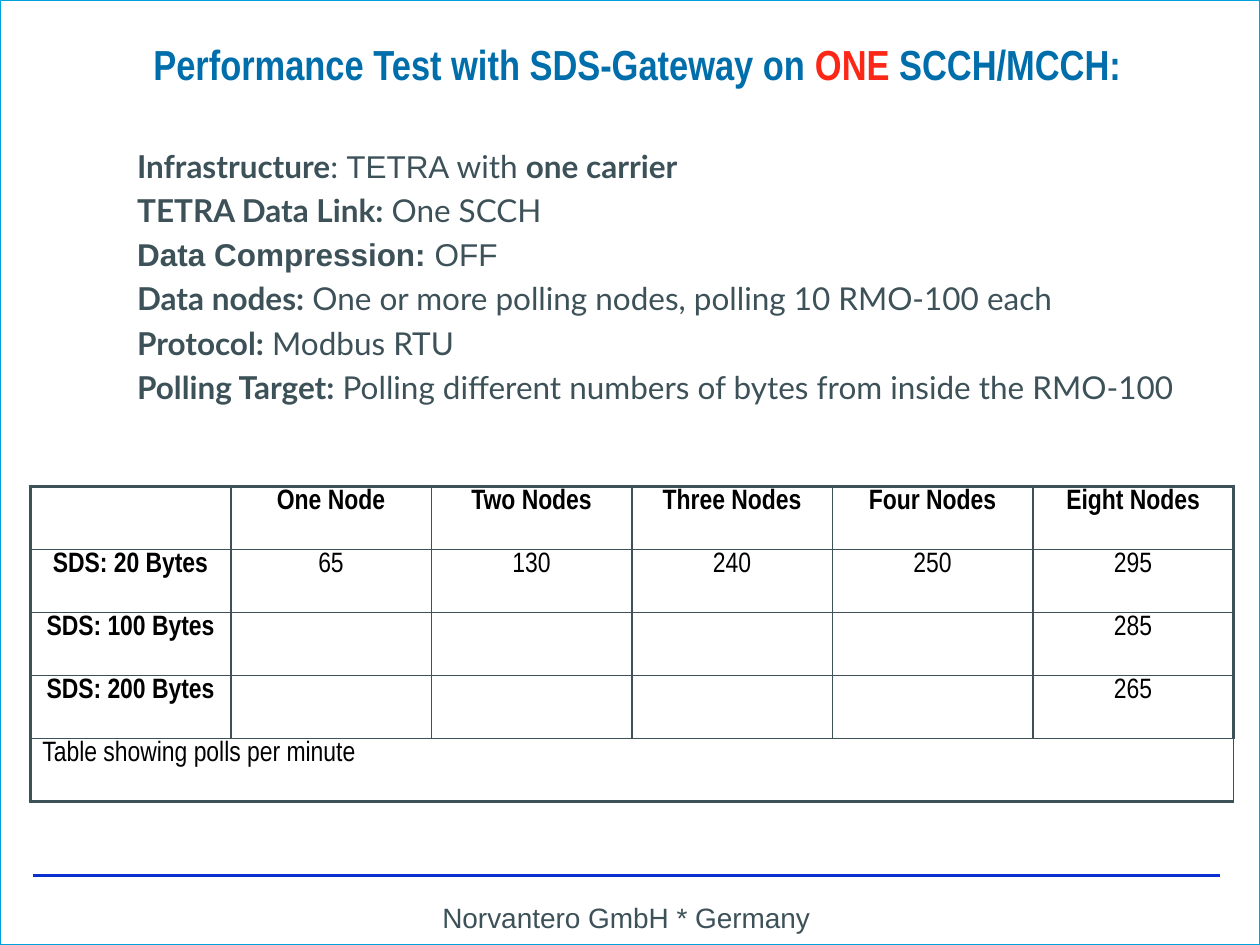
from typing import NamedTuple

from lxml.etree import SubElement as Sub
from pptx import Presentation
from pptx.dml.color import RGBColor
from pptx.enum.shapes import MSO_CONNECTOR as Link, MSO_SHAPE as Shape
from pptx.enum.text import MSO_ANCHOR as Anchor, PP_ALIGN as Align
from pptx.oxml.ns import qn
from pptx.util import Pt

GRAY, BLUE, RED = "3D5159", "006EAA", "FD2717"
NARROW = "Arial Narrow"


class Bit(NamedTuple):
    text: str
    bold: bool = False
    font: str = "Lato"
    color: str = GRAY


class Box(NamedTuple):
    left: float
    top: float
    width: float
    height: float


def paint(color: str) -> RGBColor:
    return RGBColor.from_string(color)


def write(par, text: str, *, size: float, font: str, color: str = GRAY,
          bold: bool = False) -> None:
    run = par.add_run()
    run.text = text
    face = run.font
    face.size, face.name, face.bold = Pt(size), font, bold
    face.color.rgb = paint(color)


def add_bits(par, bits: list[Bit], size: float) -> None:
    for bit in bits:
        write(par, bit.text, size=size, font=bit.font, color=bit.color,
              bold=bit.bold)


def add_frame(slide, box: Box, inset: bool = False):
    frame = slide.shapes.add_textbox(*map(Pt, box)).text_frame
    frame.word_wrap = True
    if not inset:
        frame.margin_left = frame.margin_right = 0
        frame.margin_top = frame.margin_bottom = 0
    return frame


def add_edge(cell, side: str, width: float) -> None:
    line = Sub(cell._tc.get_or_add_tcPr(), qn(f"a:{side}"), w=str(Pt(width)))
    fill = Sub(line, qn("a:solidFill"))
    Sub(fill, qn("a:srgbClr"), val=GRAY)


def add_table(slide, box: Box, rows: list[list[str]], note: str) -> None:
    high, wide = len(rows) + 1, len(rows[0])
    grid = slide.shapes.add_table(high, wide, *map(Pt, box)).table
    grid.first_row = grid.horz_banding = False
    for col in grid.columns:
        col.width = Pt(box.width / wide)
    for y in range(high):
        grid.rows[y].height = Pt(box.height / high)
        for x in range(wide):
            cell = grid.cell(y, x)
            cell.margin_left = cell.margin_right = 0
            cell.margin_top = cell.margin_bottom = 0
            # Thick on the outside, thin between cells
            outer = {"lnL": x == 0, "lnR": x == wide - 1,
                     "lnT": y == 0, "lnB": y == high - 1}
            for side, thick in outer.items():
                add_edge(cell, side, 2.25 if thick else 1)
            cell.fill.solid()
            cell.fill.fore_color.rgb = paint("FFFFFF")
            if y < len(rows) and rows[y][x]:
                par = cell.text_frame.paragraphs[0]
                par.alignment, par.line_spacing = Align.CENTER, 1.1
                write(par, rows[y][x], size=16, font=NARROW, color="000000",
                      bold=x == 0 or y == 0)
    # Note across the last row
    last = grid.cell(high - 1, 0)
    last.merge(grid.cell(high - 1, wide - 1))
    last.margin_left = Pt(7)
    par = last.text_frame.paragraphs[0]
    par.line_spacing = 1.1
    write(par, note, size=16, font=NARROW, color="000000")


def main() -> None:
    deck = Presentation()
    deck.slide_width, deck.slide_height = Pt(720), Pt(540)
    slide = deck.slides.add_slide(deck.slide_layouts[6])

    # Page border
    edge = slide.shapes.add_shape(Shape.RECTANGLE, 0, 0, Pt(720), Pt(540))
    edge.shadow.inherit = False
    edge.fill.background()
    edge.line.color.rgb = paint("00A0DD")
    edge.line.width = Pt(0.75)

    # Footer
    rule = slide.shapes.add_connector(Link.STRAIGHT, Pt(18.7), Pt(500.4),
                                      Pt(697), Pt(500.4))
    rule.line.color.rgb = paint("0A30D0")
    rule.line.width = Pt(1.5)
    Sub(rule._element.spPr, qn("a:effectLst"))
    par = add_frame(slide, Box(18.7, 514.8, 678.3, 19.4)).paragraphs[0]
    par.alignment = Align.CENTER
    write(par, "Norvantero GmbH * Germany", size=16, font="Arial")

    # Title
    frame = add_frame(slide, Box(82, 8.6, 573.2, 43.2))
    frame.vertical_anchor = Anchor.BOTTOM
    frame.margin_right, frame.margin_bottom = Pt(9), Pt(1)
    par = frame.paragraphs[0]
    par.alignment = Align.CENTER
    add_bits(par, [
        Bit("Performance Test with SDS-Gateway on ", True, NARROW, BLUE),
        Bit("ONE", True, NARROW, RED),
        Bit(" SCCH/MCCH:", True, NARROW, BLUE)], 24)

    # Test setup
    setup = [
        [Bit("Infrastructure", True), Bit(": "), Bit("TETRA ", font="Arial"),
         Bit("with "), Bit("one carrier", True)],
        [Bit("TETRA Data Link:", True), Bit(" One SCCH")],
        [Bit("Data Compression:", True, "Arial"), Bit(" OFF", font="Arial")],
        [Bit("Data nodes:", True),
         Bit(" One or more polling nodes, polling 10 RMO-100 each")],
        [Bit("Protocol:", True), Bit(" Modbus RTU")],
        [Bit("Polling Target:", True),
         Bit(" Polling different numbers of bytes from inside the RMO-100")],
    ]
    frame = add_frame(slide, Box(71.3, 80.6, 611.3, 419.8), inset=True)
    for i, bits in enumerate(setup):
        par = frame.add_paragraph() if i else frame.paragraphs[0]
        form = par._p.get_or_add_pPr()
        form.set("marL", str(Pt(28)))
        form.set("indent", str(-Pt(28)))
        if i:
            par.space_before = Pt(3.6)
        add_bits(par, bits, 18)

    # Results
    add_table(slide, Box(17.3, 277.9, 687.6, 180), [
        ["", "One Node", "Two Nodes", "Three Nodes", "Four Nodes",
         "Eight Nodes"],
        ["SDS: 20 Bytes", "65", "130", "240", "250", "295"],
        ["SDS: 100 Bytes", "", "", "", "", "285"],
        ["SDS: 200 Bytes", "", "", "", "", "265"],
    ], "Table showing polls per minute")

    deck.save("out.pptx")


if __name__ == "__main__":
    main()
